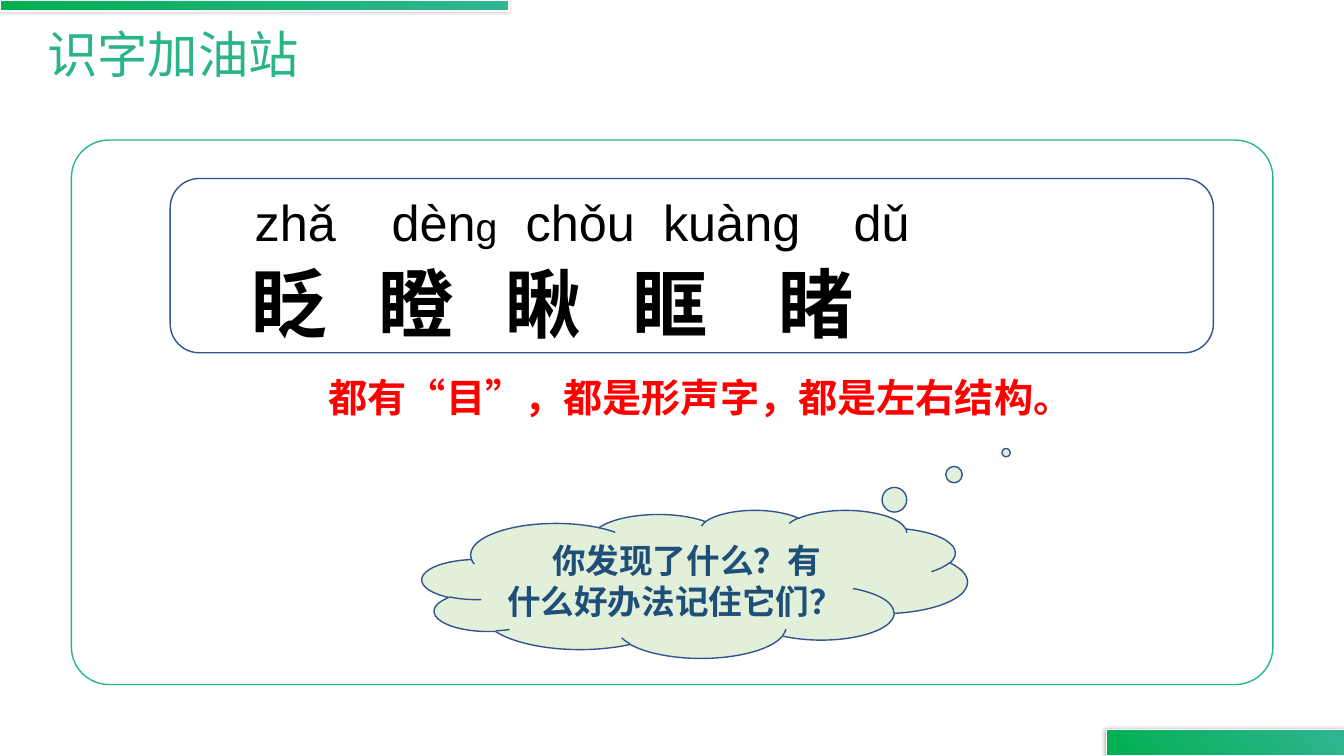
from dataclasses import dataclass

import lxml.etree
import pptx
import pptx.dml.color
import pptx.enum.shapes
import pptx.enum.text
import pptx.oxml.ns
import pptx.shapes.autoshape
import pptx.util

Cm = pptx.util.Cm
Pt = pptx.util.Pt
qn = pptx.oxml.ns.qn
Kind = pptx.enum.shapes.MSO_SHAPE
Anchor = pptx.enum.text.MSO_ANCHOR
Align = pptx.enum.text.PP_ALIGN
Shape = pptx.shapes.autoshape.Shape

COLOURS = {
    "teal": "30B593",
    "green": "00B050",
    "frame": "2AB48A",
    "outline": "325491",
    "cloud": "E2F0D9",
    "question": "1F4E79",
    "answer": "FF0000",
    "black": "000000",
    "white": "FFFFFF",
}


@dataclass(frozen=True)
class Area:
    """Left, top, width and height in centimetres."""
    left: float
    top: float
    width: float
    height: float

    def lengths(self) -> list:
        return [Cm(n) for n in (self.left, self.top, self.width, self.height)]


@dataclass(frozen=True)
class Outline:
    kind: Kind
    area: Area
    line: str
    fill: str | None = None
    adjustments: tuple[float, ...] = ()


@dataclass(frozen=True)
class Text:
    spans: tuple[tuple[str, float], ...]
    colour: str
    bold: bool = False
    align: Align = Align.LEFT
    anchor: Anchor = Anchor.TOP
    spacing: float = 1.0
    indent: float = 0
    tabs: tuple[float, ...] = ()


BARS = (Area(0, 0, 12.83, 0.28), Area(27.89, 18.39, 5.99, 0.66))
FRAME = Outline(Kind.ROUNDED_RECTANGLE, Area(1.8, 3.53, 30.28, 13.72),
                "frame", adjustments=(0.069,))
WORD_PANEL = Outline(Kind.ROUNDED_RECTANGLE, Area(4.29, 4.5, 26.29, 4.39), "outline")
CLOUD = Outline(Kind.CLOUD_CALLOUT, Area(10.64, 12.85, 13.74, 3.73),
                "outline", "cloud", (0.571, -0.887))

TITLE = Text((("识字加油站", 36),), "frame", anchor=Anchor.MIDDLE, spacing=0.9)
CHARACTERS = Text((("眨\t瞪\t瞅\t眶\t睹", 54),), "black", bold=True,
                  tabs=(3.2, 6.4, 9.6, 13.26))
PINYIN = Text((("zhǎ\tdèn", 36), ("g", 28), ("\tchǒu\tkuàng\tdǔ", 36)), "black",
              tabs=(3.45, 6.83, 10.29, 15.09))
QUESTION = Text((("你发现了什么？有什么好办法记住它们？", 24),), "question",
                bold=True, anchor=Anchor.MIDDLE, indent=1.13)
ANSWER = Text((("都有“目”，都是形声字，都是左右结构。", 28),), "answer",
              bold=True, align=Align.CENTER)


def rgb(name: str) -> pptx.dml.color.RGBColor:
    return pptx.dml.color.RGBColor.from_string(COLOURS[name])


def draw_outline(shapes, outline: Outline) -> Shape:
    shape = shapes.add_shape(outline.kind, *outline.area.lengths())
    for index, value in enumerate(outline.adjustments):
        shape.adjustments[index] = value
    shape.shadow.inherit = False
    shape.line.color.rgb = rgb(outline.line)
    shape.line.width = Pt(1)
    if outline.fill:
        shape.fill.solid()
        shape.fill.fore_color.rgb = rgb(outline.fill)
    else:
        shape.fill.background()
    return shape


def draw_bar(shapes, area: Area) -> None:
    """Draw a mirrored gradient bar with a soft shadow."""
    bar = draw_outline(shapes, Outline(Kind.RECTANGLE, area, "white"))
    bar.fill.gradient()
    bar.fill.gradient_angle = 315
    for stop, name in zip(bar.fill.gradient_stops, ("teal", "green")):
        stop.color.rgb = rgb(name)
    properties = bar._element.spPr
    properties.find(qn("a:xfrm")).set("flipH", "1")
    shadow = lxml.etree.SubElement(
        properties.find(qn("a:effectLst")), qn("a:outerShdw"),
        blurRad=str(Pt(3)), dist=str(Pt(1)), dir="10800000", rotWithShape="0")
    tint = lxml.etree.SubElement(shadow, qn("a:srgbClr"), val=COLOURS["black"])
    lxml.etree.SubElement(tint, qn("a:alpha"), val="30000")


def write_text(shape: Shape, text: Text) -> None:
    frame = shape.text_frame
    frame.word_wrap = True
    frame.vertical_anchor = text.anchor
    para = frame.paragraphs[0]
    para.alignment = text.align
    para.line_spacing = text.spacing
    properties = para._p.get_or_add_pPr()
    if text.indent:
        properties.set("indent", str(Cm(text.indent)))
    if text.tabs:
        stops = lxml.etree.SubElement(properties, qn("a:tabLst"))
        for position in text.tabs:
            lxml.etree.SubElement(stops, qn("a:tab"), pos=str(Cm(position)), algn="l")
    for words, size in text.spans:
        span = para.add_run()
        span.text = words
        span.font.color.rgb = rgb(text.colour)
        formats = {"name": "Arial", "size": Pt(size), "bold": text.bold}
        for attribute, value in formats.items():
            setattr(span.font, attribute, value)


def draw_text(shapes, area: Area, text: Text) -> None:
    write_text(shapes.add_textbox(*area.lengths()), text)


def main() -> None:
    deck = pptx.Presentation()
    deck.slide_width, deck.slide_height = Cm(33.87), Cm(19.05)
    page = deck.slides.add_slide(deck.slide_layouts[6])

    for area in BARS:
        draw_bar(page.shapes, area)
    draw_outline(page.shapes, FRAME)
    draw_text(page.shapes, Area(0.94, 0.74, 7.67, 1.4), TITLE)

    words = page.shapes.add_group_shape().shapes
    draw_outline(words, WORD_PANEL)
    draw_text(words, Area(6.1, 6.35, 22.71, 2.57), CHARACTERS)
    draw_text(words, Area(6.17, 4.7, 22.66, 1.8), PINYIN)

    write_text(draw_outline(page.shapes, CLOUD), QUESTION)
    draw_text(page.shapes, Area(4.27, 9.27, 26.77, 1.45), ANSWER)
    deck.save("out.pptx")


if __name__ == "__main__":
    main()
